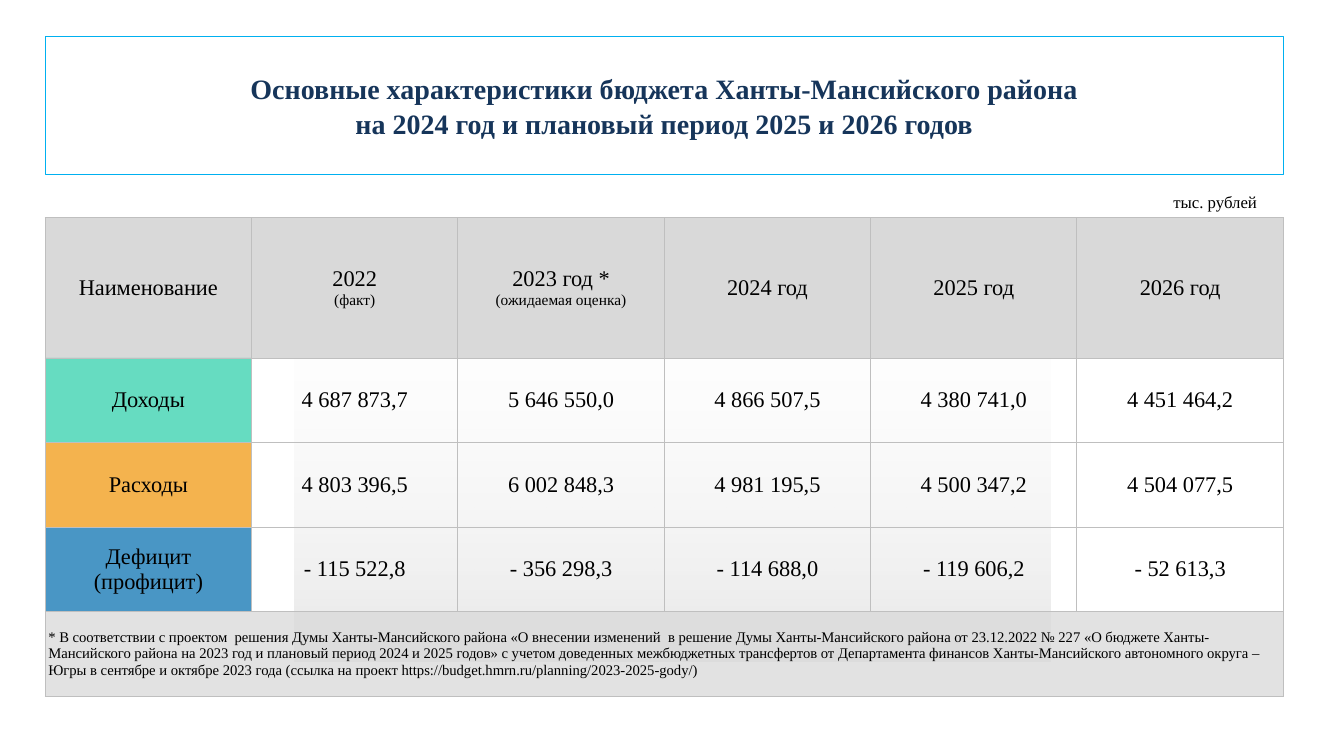
from lxml.etree import SubElement
from pptx import Presentation
from pptx.dml.color import RGBColor
from pptx.enum.shapes import MSO_SHAPE as Shape
from pptx.enum.text import MSO_ANCHOR as Anchor, MSO_AUTO_SIZE as AutoSize, PP_ALIGN as Align
from pptx.oxml import parse_xml
from pptx.oxml.ns import nsdecls, qn
from pptx.util import Cm, Pt

TITLE = ("Основные характеристики бюджета Ханты-Мансийского района\v"
         "на 2024 год и плановый период 2025 и 2026 годов")
HEADER = ["Наименование", "2022\n(факт)", "2023 год *\n(ожидаемая оценка)",
          "2024 год", "2025 год", "2026 год"]
BUDGET = [
    ("33D1AD", ["Доходы", "4 687 873,7", "5 646 550,0", "4 866 507,5", "4 380 741,0", "4 451 464,2"]),
    ("F19A14", ["Расходы", "4 803 396,5", "6 002 848,3", "4 981 195,5", "4 500 347,2", "4 504 077,5"]),
    ("0D73B2", ["Дефицит (профицит)", "- 115 522,8", "- 356 298,3", "- 114 688,0", "- 119 606,2",
                "- 52 613,3"]),
]
FOOTNOTE = (
    "* В соответствии с проектом  решения Думы Ханты-Мансийского района «О внесении изменений  "
    "в решение Думы Ханты-Мансийского района от 23.12.2022 № 227 «О бюджете Ханты-Мансийского "
    "района на 2023 год и плановый период 2024 и 2025 годов» с учетом доведенных межбюджетных "
    "трансфертов от Департамента финансов Ханты-Мансийского автономного округа – Югры в сентябре "
    "и октябре 2023 года (ссылка на проект https://budget.hmrn.ru/planning/2023-2025-gody/)")


def colour(value):
    """Turn a hex string into a colour."""
    return RGBColor.from_string(value)


def set_opacity(element, percent):
    """Set the opacity of the colour inside an element."""
    for tone in element.iter(qn("a:srgbClr")):
        SubElement(tone, qn("a:alpha"), val=str(percent * 1000))


class BudgetPage:
    """Holds the style and the current slide."""

    font = "Times New Roman"
    ink, navy, frame = "000000", "16355A", "00B0F0"
    grey, rule = "D9D9D9", "BFBFBF"

    def __init__(self, deck):
        """Add a slide that has only a title."""
        self.page = deck.slides.add_slide(deck.slide_layouts[5])

    def place(self, shape, left, top, width, height):
        """Move and size a shape, in centimetres."""
        shape.left, shape.top = Cm(left), Cm(top)
        shape.width, shape.height = Cm(width), Cm(height)

    def format(self, para, size, align, tone=ink, bold=False):
        """Set the font and alignment of a paragraph."""
        para.alignment = align
        para.font.name, para.font.size, para.font.bold = self.font, Pt(size), bold
        para.font.color.rgb = colour(tone)

    def shade(self, left, top, width, height):
        """Draw a panel that fades upwards."""
        panel = self.page.shapes.add_shape(
            Shape.RECTANGLE, Cm(left), Cm(top), Cm(width), Cm(height))
        panel.shadow.inherit = False
        panel.line.fill.background()
        panel.fill.gradient()
        panel.fill.gradient_angle = 90
        for stop, tone, opacity in zip(panel.fill.gradient_stops, ("000000", "FFFFFF"), (10, 0)):
            stop.color.rgb = colour(tone)
            set_opacity(stop._gs, opacity)

    def title(self, text, *area):
        """Fill the framed title."""
        title = self.page.shapes.title
        self.place(title, *area)
        title.line.color.rgb, title.line.width = colour(self.frame), Pt(0.75)
        frame = title.text_frame
        frame.text, frame.word_wrap = text, True
        frame.auto_size, frame.vertical_anchor = AutoSize.NONE, Anchor.MIDDLE
        para = frame.paragraphs[0]
        para.line_spacing = 1.05
        self.format(para, 20, Align.CENTER, self.navy, True)

    def label(self, text, *area):
        """Add a right-aligned label."""
        box = self.page.shapes.add_textbox(*map(Cm, area))
        box.text_frame.word_wrap = True
        box.text_frame.text = text
        self.format(box.text_frame.paragraphs[0], 12, Align.RIGHT)

    def cell(self, cell, text, fill=None, opacity=100, sizes=(16, 11), align=Align.CENTER):
        """Write and style one table cell."""
        cell.text, cell.vertical_anchor = text, Anchor.MIDDLE
        cell.margin_left = cell.margin_right = Cm(0.08)
        cell.margin_top = cell.margin_bottom = Cm(0.05)
        for para, size in zip(cell.text_frame.paragraphs, sizes):
            self.format(para, size, align)
        properties = cell._tc.get_or_add_tcPr()
        if fill:
            cell.fill.solid()
            cell.fill.fore_color.rgb = colour(fill)
            set_opacity(properties, opacity)
        else:
            cell.fill.background()
        for index, side in enumerate(("lnL", "lnR", "lnT", "lnB")):
            properties.insert(index, parse_xml(
                f'<a:{side} {nsdecls("a")} w="{Pt(0.75)}"><a:solidFill>'
                f'<a:srgbClr val="{self.rule}"/></a:solidFill></a:{side}>'))

    def table(self, header, budget, footnote, left, top, column, heights):
        """Add the budget table with its footnote row."""
        table = self.page.shapes.add_table(
            len(heights), len(header), Cm(left), Cm(top),
            Cm(column * len(header)), Cm(sum(heights))).table
        table.first_row = table.horz_banding = False
        for row, height in zip(table.rows, heights):
            row.height = Cm(height)
        for index, text in enumerate(header):
            table.columns[index].width = Cm(column)
            self.cell(table.cell(0, index), text, self.grey)
        for row, (tone, texts) in enumerate(budget, 1):
            for index, text in enumerate(texts):
                self.cell(table.cell(row, index), text, None if index else tone, 75)
        last = len(heights) - 1
        table.cell(last, 0).merge(table.cell(last, len(header) - 1))
        for index in range(len(header)):
            self.cell(table.cell(last, index), "" if index else footnote,
                      self.grey, 75, (10.5,), Align.LEFT)


def main():
    """Build the deck and save it."""
    deck = Presentation()
    deck.slide_width, deck.slide_height = Cm(33.87), Cm(19.05)
    page = BudgetPage(deck)
    page.shade(7.42, 6.58, 19.05, 10.08)
    page.label("тыс. рублей", 28.7, 4.7, 3.23, 0.76)
    page.title(TITLE, 1.14, 0.91, 31.2, 3.48)
    page.table(HEADER, BUDGET, FOOTNOTE, 1.14, 5.49, 5.2, [3.53] + [2.13] * 4)
    deck.save("out.pptx")


if __name__ == "__main__":
    main()
